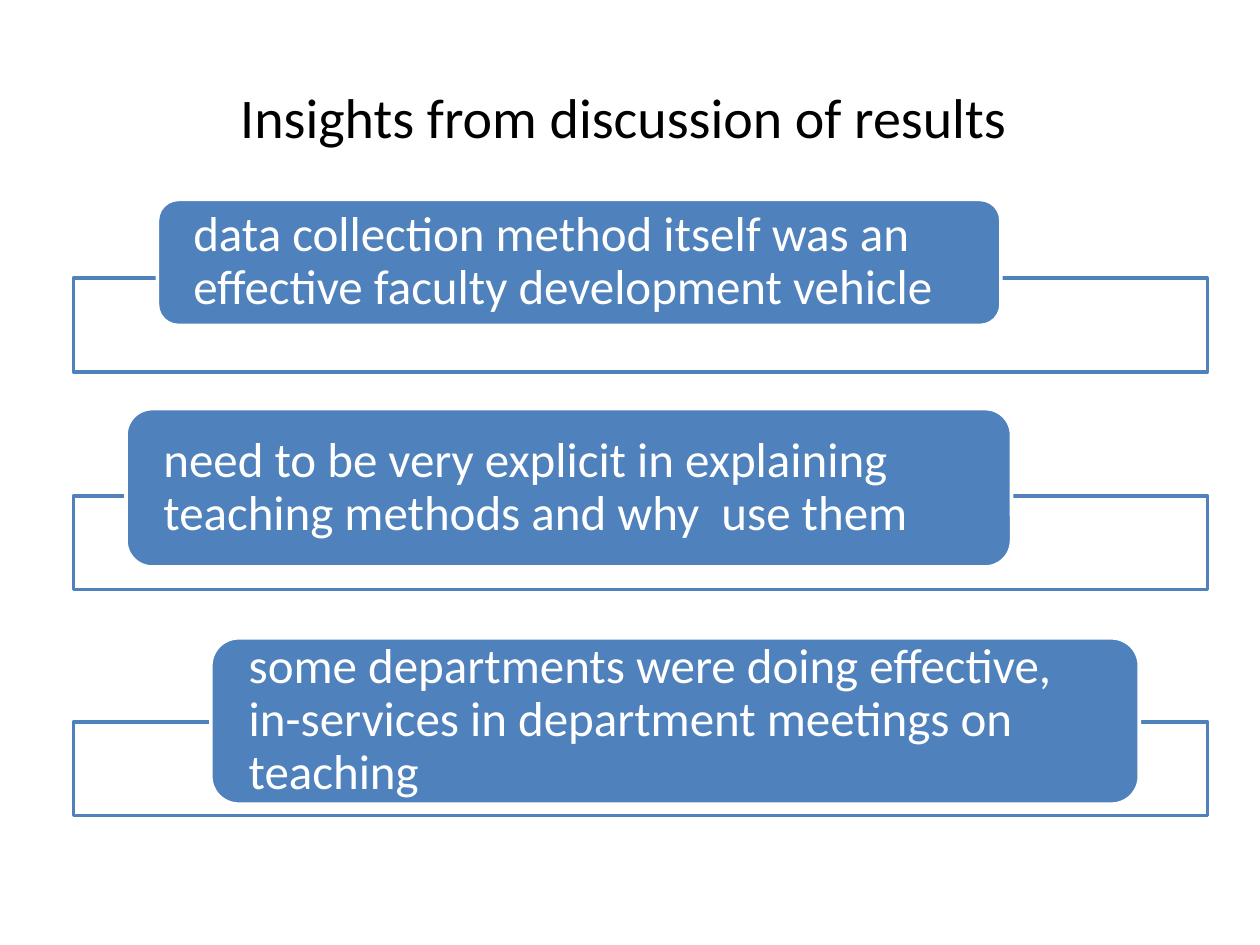
from lxml import etree
from pptx import Presentation
from pptx.dml.color import RGBColor
from pptx.enum.shapes import MSO_SHAPE
from pptx.enum.text import MSO_ANCHOR, PP_ALIGN
from pptx.oxml.ns import qn
from pptx.util import Pt

RECTANGLE = MSO_SHAPE.RECTANGLE
ROUNDED = MSO_SHAPE.ROUNDED_RECTANGLE
MIDDLE = MSO_ANCHOR.MIDDLE
LEFT, CENTER = PP_ALIGN.LEFT, PP_ALIGN.CENTER
TITLE_ONLY = 5

COLORS = {"accent": "4F81BD", "white": "FFFFFF", "black": "000000"}
FONT = "Calibri"

# Frame box, then label box relative to the frame, in points
FRAME_LEFT, FRAME_WIDTH, FRAME_HEIGHT = 42, 648, 53.5
INSIGHTS = [
    (159, (48, -45, 482, 72),
     "data collection method itself was an effective faculty development vehicle"),
    (283.5, (30, -50, 506, 90.5),
     "need to be very explicit in explaining teaching methods and why  use them"),
    (412.5, (78.5, -48, 530.5, 95),
     "some departments were doing effective, in-services in department meetings on teaching"),
]


def color(key):
    return RGBColor.from_string(COLORS[key])


def style_paragraph(paragraph, size, color_key, alignment):
    paragraph.alignment = alignment
    paragraph.font.name = FONT
    paragraph.font.size = Pt(size)
    paragraph.font.color.rgb = color(color_key)


def add_box(slide, preset, box, fill, line):
    shape = slide.shapes.add_shape(preset, *(Pt(length) for length in box))
    shape.shadow.inherit = False
    shape.fill.solid()
    shape.fill.fore_color.rgb = color(fill)
    shape.line.color.rgb = color(line)
    shape.line.width = Pt(2)
    return shape


def set_opacity(shape, percent):
    fill_color = shape.fill._xPr.find(qn("a:solidFill"))[0]
    etree.SubElement(fill_color, qn("a:alpha"), val=str(percent * 1000))


def add_title(slide, box, text):
    title = slide.shapes.title
    title.left, title.top, title.width, title.height = (Pt(n) for n in box)
    title.text_frame.text = text
    title.text_frame.vertical_anchor = MIDDLE
    style_paragraph(title.text_frame.paragraphs[0], 32, "black", CENTER)


def add_insight(slide, box, label_box, text):
    left, top, _, _ = box
    dx, dy, width, height = label_box

    # Outlined frame behind the label
    frame = add_box(slide, RECTANGLE, box, "white", "accent")
    set_opacity(frame, 90)

    # Rounded label overlapping the frame's top edge
    label = add_box(slide, ROUNDED, (left + dx, top + dy, width, height),
                    "accent", "white")
    text_frame = label.text_frame
    text_frame.word_wrap = True
    text_frame.vertical_anchor = MIDDLE
    text_frame.margin_left = text_frame.margin_right = Pt(17)
    text_frame.margin_top = text_frame.margin_bottom = 0
    text_frame.text = text
    paragraph = text_frame.paragraphs[0]
    paragraph.line_spacing = 0.9
    style_paragraph(paragraph, 28, "white", LEFT)


def main():
    prs = Presentation()
    prs.slide_width, prs.slide_height = Pt(720), Pt(540)
    slide = prs.slides.add_slide(prs.slide_layouts[TITLE_ONLY])

    add_title(slide, (36, 21.6, 648, 90), "Insights from discussion of results ")
    for top, label_box, text in INSIGHTS:
        add_insight(slide, (FRAME_LEFT, top, FRAME_WIDTH, FRAME_HEIGHT),
                    label_box, text)

    prs.save("out.pptx")


if __name__ == "__main__":
    main()
